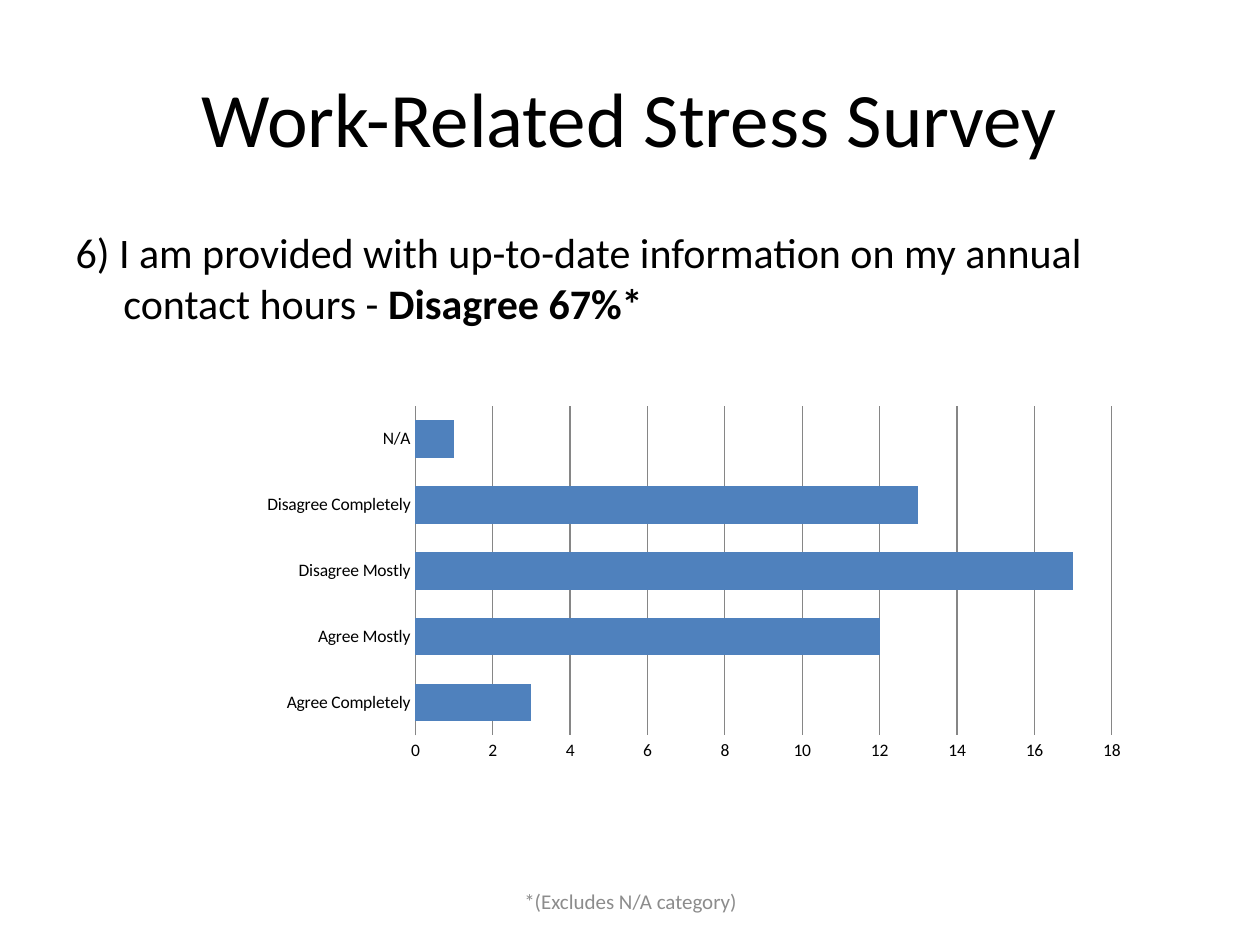
import pptx
import pptx.chart.data
import pptx.dml.color
import pptx.enum.chart
import pptx.enum.text
import pptx.oxml
import pptx.oxml.ns
import pptx.util
from pptx.util import Inches

# Content
TITLE = "Work-Related Stress Survey"
QUESTION = "6) I am provided with up-to-date information on my annual contact hours - "
RESULT = "Disagree 67%*"
FOOTNOTE = "*(Excludes N/A category)"
ANSWERS = [
    ("Agree Completely", 3),
    ("Agree Mostly", 12),
    ("Disagree Mostly", 17),
    ("Disagree Completely", 13),
    ("N/A", 1),
]
PLOT = {"x": 0.28, "y": 0.03, "w": 0.68, "h": 0.76}
FONT = "Calibri"
BLACK, GRAY, GRID, BLUE = "000000", "8C8C8C", "868686", "4F81BD"
ALIGN = pptx.enum.text.PP_ALIGN
MIDDLE = pptx.enum.text.MSO_ANCHOR.MIDDLE


def rgb(value):
    return pptx.dml.color.RGBColor.from_string(value)


def style(font, size, color=BLACK, bold=False):
    font.name, font.size, font.bold = FONT, pptx.util.Pt(size), bold
    font.color.rgb = rgb(color)


def add_text(p, text, size=24, color=BLACK, bold=False, align=ALIGN.LEFT):
    p.alignment = align
    r = p.add_run()
    r.text = text
    style(r.font, size, color, bold)


def place(sp, x, y, w, h):
    sp.left, sp.top, sp.width, sp.height = map(Inches, (x, y, w, h))
    sp.text_frame.word_wrap = True
    return sp.text_frame


prs = pptx.Presentation()
prs.slide_width, prs.slide_height = Inches(10), Inches(7.5)
s = prs.slides.add_slide(prs.slide_layouts[1])

# Title
tf = place(s.shapes.title, 0.5, 0.3, 9, 1.25)
tf.vertical_anchor = MIDDLE
add_text(tf.paragraphs[0], TITLE, size=44, align=ALIGN.CENTER)

# Question, with a hanging indent and no bullet
tf = place(s.placeholders[1], 0.5, 1.75, 9, 4.95)
p = tf.paragraphs[0]
add_text(p, QUESTION)
add_text(p, RESULT, bold=True)
p.space_before = pptx.util.Pt(5)
pPr = p._p.get_or_add_pPr()
pPr.set("marL", str(Inches(0.38)))
pPr.set("indent", str(-Inches(0.38)))
pPr.append(pptx.oxml.parse_xml(f"<a:buNone {pptx.oxml.ns.nsdecls('a')}/>"))

# Bar chart
data = pptx.chart.data.CategoryChartData()
data.categories = [name for name, count in ANSWERS]
data.add_series("Series 1", [count for name, count in ANSWERS])
chart = s.shapes.add_chart(
    pptx.enum.chart.XL_CHART_TYPE.BAR_CLUSTERED,
    Inches(1.02), Inches(3.12), Inches(8.13), Inches(3.44), data).chart
chart.has_legend = chart.has_title = False
style(chart.font, 10)
bars = chart.plots[0]
bars.gap_width, bars.overlap, bars.vary_by_categories = 75, -25, False
fill = bars.series[0].format.fill
fill.solid()
fill.fore_color.rgb = rgb(BLUE)

# Axes
cat, val = chart.category_axis, chart.value_axis
for axis in (cat, val):
    axis.major_tick_mark = axis.minor_tick_mark = pptx.enum.chart.XL_TICK_MARK.NONE
val.minimum_scale, val.maximum_scale, val.major_unit = 0, 18, 2
val.has_major_gridlines = True
val.format.line.fill.background()
for line in (cat.format.line, val.major_gridlines.format.line):
    line.color.rgb = rgb(GRID)
    line.width = pptx.util.Pt(0.75)

# Fixed inner plot area
area = chart._chartSpace.chart.plotArea
for old in area.findall(pptx.oxml.ns.qn("c:layout")):
    area.remove(old)
modes = '<c:layoutTarget val="inner"/><c:xMode val="edge"/><c:yMode val="edge"/>'
sizes = "".join(f'<c:{key} val="{value}"/>' for key, value in PLOT.items())
area.insert(0, pptx.oxml.parse_xml(
    f"<c:layout {pptx.oxml.ns.nsdecls('c')}><c:manualLayout>"
    f"{modes}{sizes}</c:manualLayout></c:layout>"))

# Footnote
tf = place(s.shapes.add_textbox(0, 0, 0, 0), 3.42, 6.95, 3.17, 0.4)
tf.vertical_anchor = MIDDLE
add_text(tf.paragraphs[0], FOOTNOTE, size=12, color=GRAY, align=ALIGN.CENTER)

prs.save("out.pptx")
